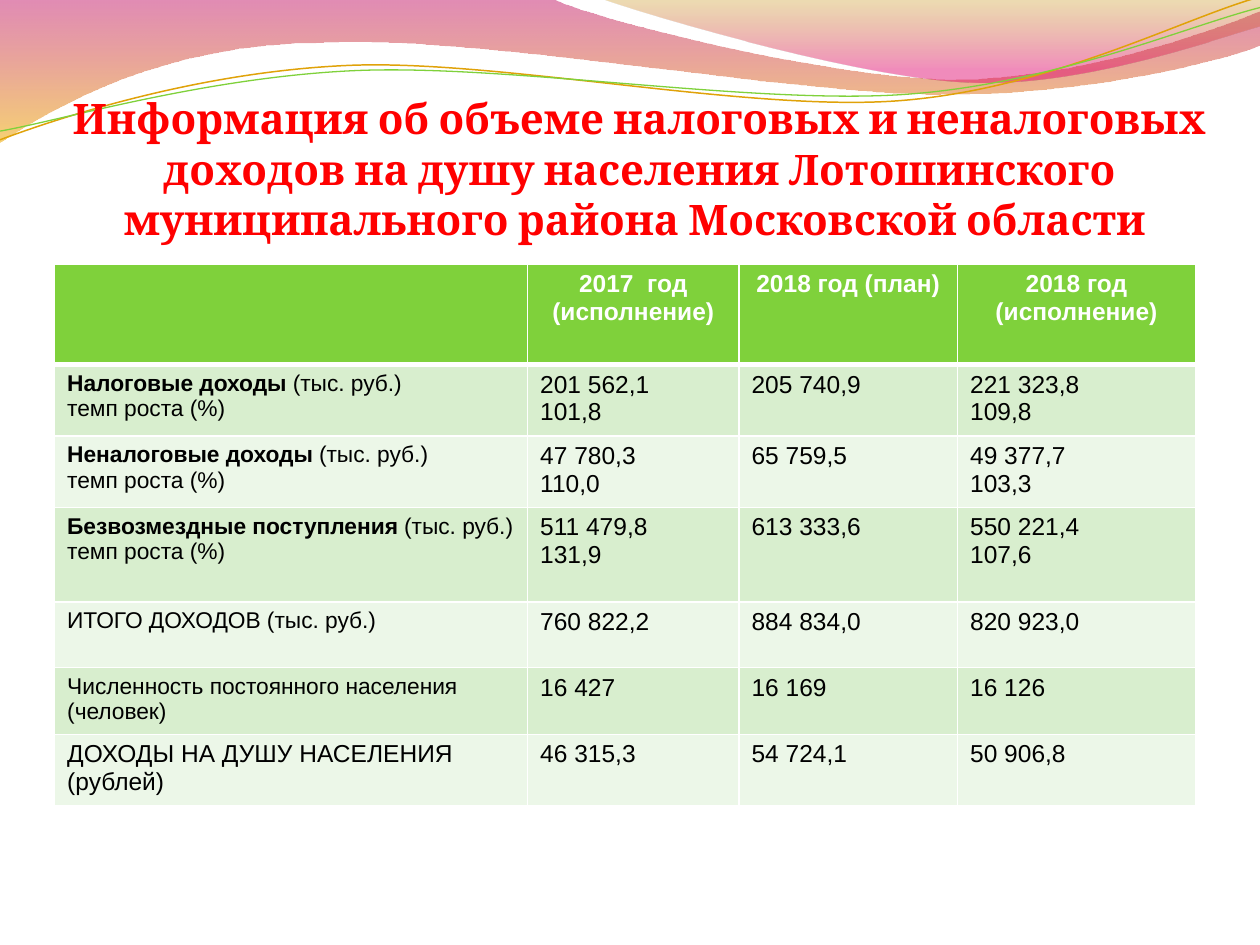
from lxml.etree import SubElement
from pptx import Presentation
from pptx.dml.color import RGBColor
from pptx.enum.text import MSO_ANCHOR, MSO_AUTO_SIZE, PP_ALIGN
from pptx.oxml import parse_xml
from pptx.oxml.ns import nsdecls, qn
from pptx.util import Pt

COLORS = {
    "title": "FF0000", "text": "000000", "white": "FFFFFF",
    "header": "7FD13B", "odd": "D8EECE", "even": "ECF7E8",
    "magenta": "BD0059", "amber": "F0AB00", "ochre": "C38B00",
    "pink": "E1006B", "gold": "E0A209", "green": "7FD13B",
}
TITLE = ("Информация об объеме налоговых и неналоговых доходов на душу населения "
         "Лотошинского муниципального района Московской области ")
HEADERS = ["", "2017  год (исполнение)", "2018 год (план)", "2018 год (исполнение)"]
UNIT, GROWTH = "(тыс. руб.)", "темп роста (%)"
ROWS = [
    ("Налоговые доходы ", f"{UNIT}\n{GROWTH}", 13,
     ["201 562,1\n101,8", "205 740,9", "221 323,8\n109,8"]),
    ("Неналоговые доходы ", f"{UNIT}\n{GROWTH}", 13,
     ["47 780,3\n110,0", "65 759,5", "49 377,7\n103,3"]),
    ("Безвозмездные поступления ", f"{UNIT}\n{GROWTH}", 13,
     ["511 479,8\n131,9", "613 333,6", "550 221,4\n107,6"]),
    ("", f"ИТОГО ДОХОДОВ {UNIT}", 13, ["760 822,2", "884 834,0", "820 923,0"]),
    ("", "Численность постоянного населения (человек)", 13, ["16 427", "16 169", "16 126"]),
    ("", "ДОХОДЫ НА ДУШУ НАСЕЛЕНИЯ (рублей)", 14, ["46 315,3", "54 724,1", "50 906,8"]),
]
COLUMN_WIDTHS = [270.3, 120.8, 124.9, 136]
ROW_HEIGHTS = [57.5, 40.8, 40.8, 54, 37.5, 38.2, 40.8]

BANDS = [
    ([(0, 0), (316.8, 0),
      (342.7, 12.2, 478.1, 45.4, 545.8, 45.4), (614.2, 45.4, 689.8, 18.7, 720, 6.5),
      (720, 25.9), (707.8, 31.7, 626.4, 54.7, 537.1, 54),
      (447.8, 54, 275, 20.2, 185, 24.5), (92.9, 25.2, 33.1, 59.8, 0, 81.4)],
     [(0, "magenta", 45), (1, "amber", 55)]),
    ([(344.9, 0), (366.5, 7.9, 491, 44.6, 553.7, 46.8),
      (616.3, 49.7, 691.9, 23, 720, 15.1), (720, 0)],
     [(0, "ochre", 30), (0.8, "pink", 45)]),
]
STRANDS = [
    ([(0, 79.9), (34.6, 67, 113.8, 41, 199.4, 37.4),
      (284.4, 33.8, 427, 64.1, 513.4, 57.6), (599.8, 51.1, 675.4, 10.8, 718.6, -1.4)],
     "gold", 0.85),
    ([(0, 74.9), (33.8, 69.1, 118.1, 43.9, 203.8, 40.3),
      (290.2, 36.7, 429.8, 59.8, 516.2, 54), (601.9, 48.2, 677.5, 15.1, 720, 4.3)],
     "green", 0.75),
]


def rgb(name):
    return RGBColor.from_string(COLORS[name])


def add_outline(slide, segments, close):
    points = [(Pt(segment[i]), Pt(segment[i + 1]))
              for segment in segments for i in range(0, len(segment), 2)]
    builder = slide.shapes.build_freeform(*points[0], scale=1.0)
    builder.add_line_segments(points[1:], close=close)
    shape = builder.convert_to_shape()
    shape.shadow.inherit = False
    lines = iter(list(shape.element.iter(qn("a:lnTo"))))
    for segment in segments[1:]:
        first = next(lines)
        if len(segment) == 6:
            curve = parse_xml(f'<a:cubicBezTo {nsdecls("a")}/>')
            first.addprevious(curve)
            for line in (first, next(lines), next(lines)):
                curve.append(line[0])
                line.getparent().remove(line)
    return shape


def add_waves(slide):
    for segments, stops in BANDS:
        band = add_outline(slide, segments, True)
        band.line.fill.background()
        band.fill.gradient()
        band.fill.gradient_angle = 270
        for stop, (position, color, _) in zip(band.fill.gradient_stops, stops):
            stop.position = position
            stop.color.rgb = rgb(color)
        values = band.element.spPr.iter(qn("a:srgbClr"))
        for value, (_, _, opacity) in zip(values, stops):
            SubElement(value, qn("a:alpha")).set("val", str(opacity * 1000))
    for segments, color, width in STRANDS:
        strand = add_outline(slide, segments, False)
        strand.fill.background()
        strand.line.color.rgb = rgb(color)
        strand.line.width = Pt(width)


def format_run(run, size, color, bold, font="Arial"):
    run.font.name, run.font.size, run.font.bold = font, Pt(size), bold
    run.font.color.rgb = rgb(color)


def set_title(title):
    title.left, title.top, title.width, title.height = Pt(36), Pt(31.4), Pt(658.8), Pt(108)
    frame = title.text_frame
    frame.text = TITLE
    frame.word_wrap = True
    frame.auto_size = MSO_AUTO_SIZE.NONE
    frame.vertical_anchor = MSO_ANCHOR.BOTTOM
    frame.margin_left = frame.margin_right = frame.margin_bottom = 0
    frame.margin_top = Pt(3.6)
    paragraph = frame.paragraphs[0]
    paragraph.alignment = PP_ALIGN.CENTER
    format_run(paragraph.runs[0], 24, "title", True, "Cambria")


def fill_cell(cell, text, size, color="text", bold=False, lead="", align=PP_ALIGN.LEFT):
    cell.text_frame.text = text
    for paragraph in cell.text_frame.paragraphs:
        paragraph.alignment = align
        for run in paragraph.runs:
            format_run(run, size, color, bold)
    if lead:
        first = cell.text_frame.paragraphs[0]
        rest = first.add_run()
        rest.text = first.runs[0].text
        first.runs[0].text = lead
        format_run(first.runs[0], size, color, True)
        format_run(rest, size, color, bold)


def paint_cell(cell, row):
    cell.fill.solid()
    cell.fill.fore_color.rgb = rgb("header" if row == 0 else "odd" if row % 2 else "even")
    widths = {"L": 1, "R": 1, "T": 3 if row == 1 else 1, "B": 3 if row == 0 else 1}
    properties = cell._tc.get_or_add_tcPr()
    for index, (side, width) in enumerate(widths.items()):
        properties.insert(index, parse_xml(
            f'<a:ln{side} {nsdecls("a")} w="{Pt(width)}"><a:solidFill>'
            f'<a:srgbClr val="{COLORS["white"]}"/></a:solidFill></a:ln{side}>'))


def add_income_table(slide):
    frame = slide.shapes.add_table(len(ROW_HEIGHTS), len(COLUMN_WIDTHS), Pt(31.2), Pt(150.9),
                                   Pt(sum(COLUMN_WIDTHS)), Pt(sum(ROW_HEIGHTS)))
    table = frame.table
    table.horz_banding = False
    for column, width in zip(table.columns, COLUMN_WIDTHS):
        column.width = Pt(width)
    for row, height in zip(table.rows, ROW_HEIGHTS):
        row.height = Pt(height)
    for column, header in enumerate(HEADERS):
        fill_cell(table.cell(0, column), header, 14, "white", True, align=PP_ALIGN.CENTER)
    for row, (lead, label, size, values) in enumerate(ROWS, 1):
        fill_cell(table.cell(row, 0), label, size, lead=lead)
        for column, value in enumerate(values, 1):
            fill_cell(table.cell(row, column), value, 14)
    for row in range(len(ROW_HEIGHTS)):
        for column in range(len(COLUMN_WIDTHS)):
            paint_cell(table.cell(row, column), row)
    return frame


def main():
    """Build the slide on tax and non-tax income per resident."""
    presentation = Presentation()
    presentation.slide_width, presentation.slide_height = Pt(720), Pt(540)
    slide = presentation.slides.add_slide(presentation.slide_layouts[5])
    add_waves(slide)
    table_frame = add_income_table(slide)
    set_title(slide.shapes.title)
    table_frame.element.addprevious(slide.shapes.title.element)
    presentation.save("out.pptx")


if __name__ == "__main__":
    main()
